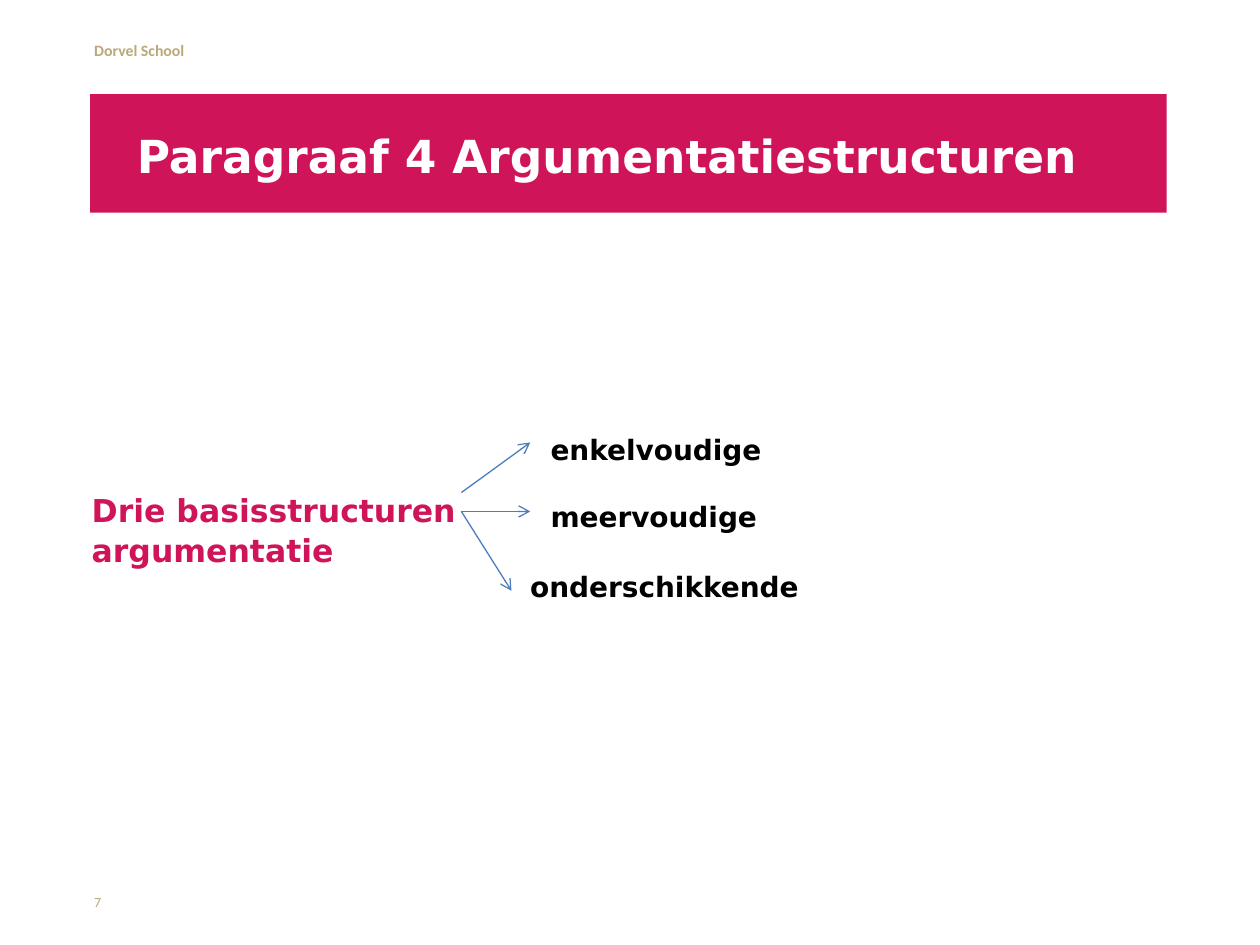
from typing import NamedTuple

from lxml import etree
from pptx import Presentation
from pptx.dml.color import RGBColor
from pptx.enum.shapes import MSO_CONNECTOR, MSO_SHAPE
from pptx.enum.text import MSO_ANCHOR, PP_ALIGN
from pptx.oxml.ns import qn
from pptx.util import Cm, Pt

RECTANGLE = MSO_SHAPE.RECTANGLE
STRAIGHT = MSO_CONNECTOR.STRAIGHT
TOP, MIDDLE = MSO_ANCHOR.TOP, MSO_ANCHOR.MIDDLE
LEFT = PP_ALIGN.LEFT

CRIMSON = RGBColor(0xD0, 0x14, 0x5A)
SAND = RGBColor(0xBA, 0xA8, 0x79)
BLUE = RGBColor(0x4B, 0x7E, 0xBC)
WHITE = RGBColor(0xFF, 0xFF, 0xFF)
BLACK = RGBColor(0x00, 0x00, 0x00)
HEADING_FONT = "DejaVu Sans"
SMALL_FONT = "Calibri"


class Box(NamedTuple):
    """Left, top, width and height in centimetres."""
    left: float
    top: float
    width: float
    height: float


class Branch(NamedTuple):
    """One kind of structure and the arrow that leads to it, in centimetres."""
    label: str
    box: Box
    start: tuple[float, float]
    end: tuple[float, float]


BRANCHES = [
    Branch("enkelvoudige", Box(11.1, 8.59, 5.2, 0.75), (9.3, 9.93), (10.69, 8.92)),
    Branch("meervoudige", Box(11.1, 9.93, 5.2, 0.75), (9.3, 10.31), (10.69, 10.31)),
    Branch("onderschikkende", Box(10.69, 11.35, 5.6, 0.8), (9.3, 10.31), (10.31, 11.91)),
]


def write(shape, text: str, *, size: float, color: RGBColor, font: str = HEADING_FONT,
          bold: bool = True, anchor=TOP, line_pt: float | None = None,
          insets: tuple[float, float, float, float] = (0, 0, 0, 0)) -> None:
    """Fill a shape with text, one paragraph per line."""
    frame = shape.text_frame
    frame.word_wrap = True
    frame.vertical_anchor = anchor
    (frame.margin_left, frame.margin_top,
     frame.margin_right, frame.margin_bottom) = map(Cm, insets)
    frame.text = text
    for paragraph in frame.paragraphs:
        paragraph.alignment = LEFT
        if line_pt:
            paragraph.line_spacing = Pt(line_pt)
        for run in paragraph.runs:
            run.font.name = font
            run.font.size = Pt(size)
            run.font.bold = bold
            run.font.color.rgb = color


def add_text(slide, box: Box, text: str, **text_format) -> None:
    write(slide.shapes.add_textbox(*map(Cm, box)), text, **text_format)


def add_banner(slide, box: Box, text: str) -> None:
    banner = slide.shapes.add_shape(RECTANGLE, *map(Cm, box))
    banner.shadow.inherit = False
    banner.fill.solid()
    banner.fill.fore_color.rgb = CRIMSON
    banner.line.fill.background()
    write(banner, text, size=26, color=WHITE, anchor=MIDDLE,
          insets=(0.94, 0.2, 0.71, 0.13))


def add_arrow(slide, start: tuple[float, float], end: tuple[float, float]) -> None:
    arrow = slide.shapes.add_connector(STRAIGHT, *map(Cm, start + end))
    arrow.line.color.rgb = BLUE
    arrow.line.width = Pt(0.75)
    etree.SubElement(arrow.line._get_or_add_ln(), qn("a:tailEnd"), type="arrow")
    etree.SubElement(arrow._element.spPr, qn("a:effectLst"))


def main() -> None:
    deck = Presentation()
    deck.slide_width, deck.slide_height = Cm(25.4), Cm(19.05)
    slide = deck.slides.add_slide(deck.slide_layouts[6])

    add_text(slide, Box(1.9, 0.69, 20, 0.64), "Dorvel School", size=9, color=SAND,
             font=SMALL_FONT, insets=(0, 0.13, 0, 0.13))
    add_banner(slide, Box(1.82, 1.9, 21.7, 2.39), "Paragraaf 4 Argumentatiestructuren")
    add_text(slide, Box(1.85, 9.85, 8.2, 1.62), "Drie basisstructuren\nargumentatie",
             size=18, color=CRIMSON, line_pt=23)
    for branch in BRANCHES:
        add_arrow(slide, branch.start, branch.end)
        add_text(slide, branch.box, branch.label, size=16, color=BLACK, line_pt=23)
    add_text(slide, Box(1.9, 17.93, 0.8, 0.5), "7", size=8, color=SAND,
             font=SMALL_FONT, bold=False, anchor=MIDDLE)

    deck.save("out.pptx")


if __name__ == "__main__":
    main()
